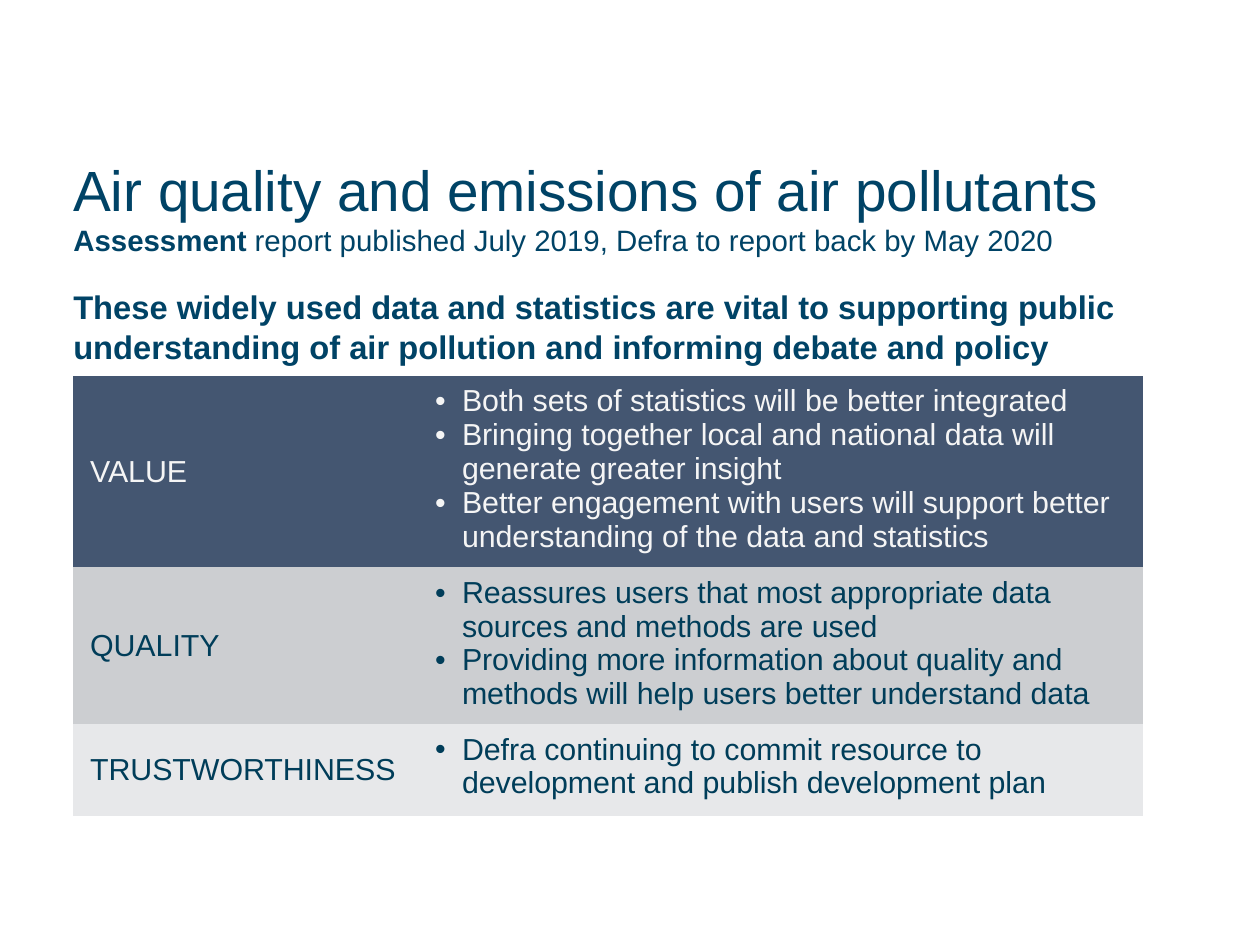
from lxml.etree import SubElement
from pptx import Presentation
from pptx.dml.color import RGBColor
from pptx.enum.text import MSO_ANCHOR as Anchor, MSO_AUTO_SIZE as AutoSize, PP_ALIGN as Align
from pptx.oxml.ns import qn
from pptx.util import Pt

LEFT, WIDTH = 31.4, 458.6
COLUMNS = [147.9, 310.7]
NO_GRID_STYLE = "{2D5ABB26-0587-4C30-8999-92F81FD0307C}"
TOPICS = [
    ("VALUE", 82, "445671", "F5F5F5", [
        "Both sets of statistics will be better integrated",
        "Bringing together local and national data will generate greater insight",
        "Better engagement with users will support better understanding of the data and statistics",
    ]),
    ("QUALITY", 67.2, "CCCED1", "003D59", [
        "Reassures users that most appropriate data sources and methods are used",
        "Providing more information about quality and methods will help users better understand data",
    ]),
    ("TRUSTWORTHINESS", 39.4, "E7E8EA", "003D59", [
        "Defra continuing to commit resource to development and publish development plan",
    ]),
]


def color(hex_string):
    return RGBColor.from_string(hex_string)


def set_bullet(paragraph, char=None, indent=0, font_name="Arial"):
    """Give the paragraph a hanging bullet, or none when no char is given."""
    properties = paragraph._p.get_or_add_pPr()
    properties.set("marL", str(Pt(indent)))
    properties.set("indent", str(-Pt(indent)))
    if char:
        SubElement(properties, qn("a:buFont")).set("typeface", font_name)
        SubElement(properties, qn("a:buChar")).set("char", char)
    else:
        SubElement(properties, qn("a:buNone"))


class SlideBuilder:
    font_name = "Arial"
    heading_color = "004366"

    def __init__(self, deck):
        self.page = deck.slides.add_slide(deck.slide_layouts[1])
        background = self.page.background.fill
        background.solid()
        background.fore_color.rgb = color("FFFFFF")

    def style(self, paragraph, size, hex_string, bold=False):
        font = paragraph.font
        font.name, font.size, font.bold = self.font_name, Pt(size), bold
        font.color.rgb = color(hex_string)

    def heading(self, box, top, height):
        """Place a placeholder and return its first paragraph, ready for text."""
        box.left, box.top, box.width, box.height = Pt(LEFT), Pt(top), Pt(WIDTH), Pt(height)
        frame = box.text_frame
        frame.margin_left = frame.margin_right = frame.margin_top = frame.margin_bottom = 0
        frame.word_wrap, frame.auto_size = True, AutoSize.NONE
        frame.vertical_anchor = Anchor.TOP
        paragraph = frame.paragraphs[0]
        paragraph.alignment, paragraph.line_spacing = Align.LEFT, 1.0
        paragraph.space_before = Pt(0)
        return paragraph

    def title(self, text, label, detail):
        paragraph = self.heading(self.page.shapes.title, 66.2, 39.6)
        self.style(paragraph, 24.3, self.heading_color)
        paragraph.add_run().text = text
        paragraph.add_line_break()
        for words, bold in ((label, True), (detail, False)):
            span = paragraph.add_run()
            span.text = words
            span.font.size, span.font.bold = Pt(12.6), bold

    def summary(self, text):
        paragraph = self.heading(self.page.placeholders[1], 123.1, 44.6)
        set_bullet(paragraph)
        paragraph.text = text
        self.style(paragraph, 14, self.heading_color, bold=True)

    def cell(self, cell, lines, fill, ink, bullet=None):
        cell.fill.solid()
        cell.fill.fore_color.rgb = color(fill)
        cell.vertical_anchor = Anchor.TOP if bullet else Anchor.MIDDLE
        frame = cell.text_frame
        for number, line in enumerate(lines):
            paragraph = frame.add_paragraph() if number else frame.paragraphs[0]
            if bullet:
                set_bullet(paragraph, bullet, 11.5, self.font_name)
            paragraph.text = line
            self.style(paragraph, 13, ink)

    def topic_table(self, topics, top):
        height = sum(topic[1] for topic in topics)
        table = self.page.shapes.add_table(
            len(topics), len(COLUMNS), Pt(LEFT), Pt(top), Pt(WIDTH), Pt(height)).table
        table.first_row = table.horz_banding = False
        table._tbl.tblPr.find(qn("a:tableStyleId")).text = NO_GRID_STYLE
        for column, width in zip(table.columns, COLUMNS):
            column.width = Pt(width)
        for row, (name, row_height, fill, ink, points) in zip(table.rows, topics):
            row.height = Pt(row_height)
            self.cell(row.cells[0], [name], fill, ink)
            self.cell(row.cells[1], points, fill, ink, bullet="•")


def main():
    deck = Presentation()
    deck.slide_width, deck.slide_height = Pt(540), Pt(405)
    slide = SlideBuilder(deck)
    slide.title("Air quality and emissions of air pollutants", "Assessment",
                " report published July 2019, Defra to report back by May 2020")
    slide.summary("These widely used data and statistics are vital to supporting public "
                  "understanding of air pollution and informing debate and policy")
    slide.topic_table(TOPICS, 161.2)
    deck.save("out.pptx")


if __name__ == "__main__":
    main()
